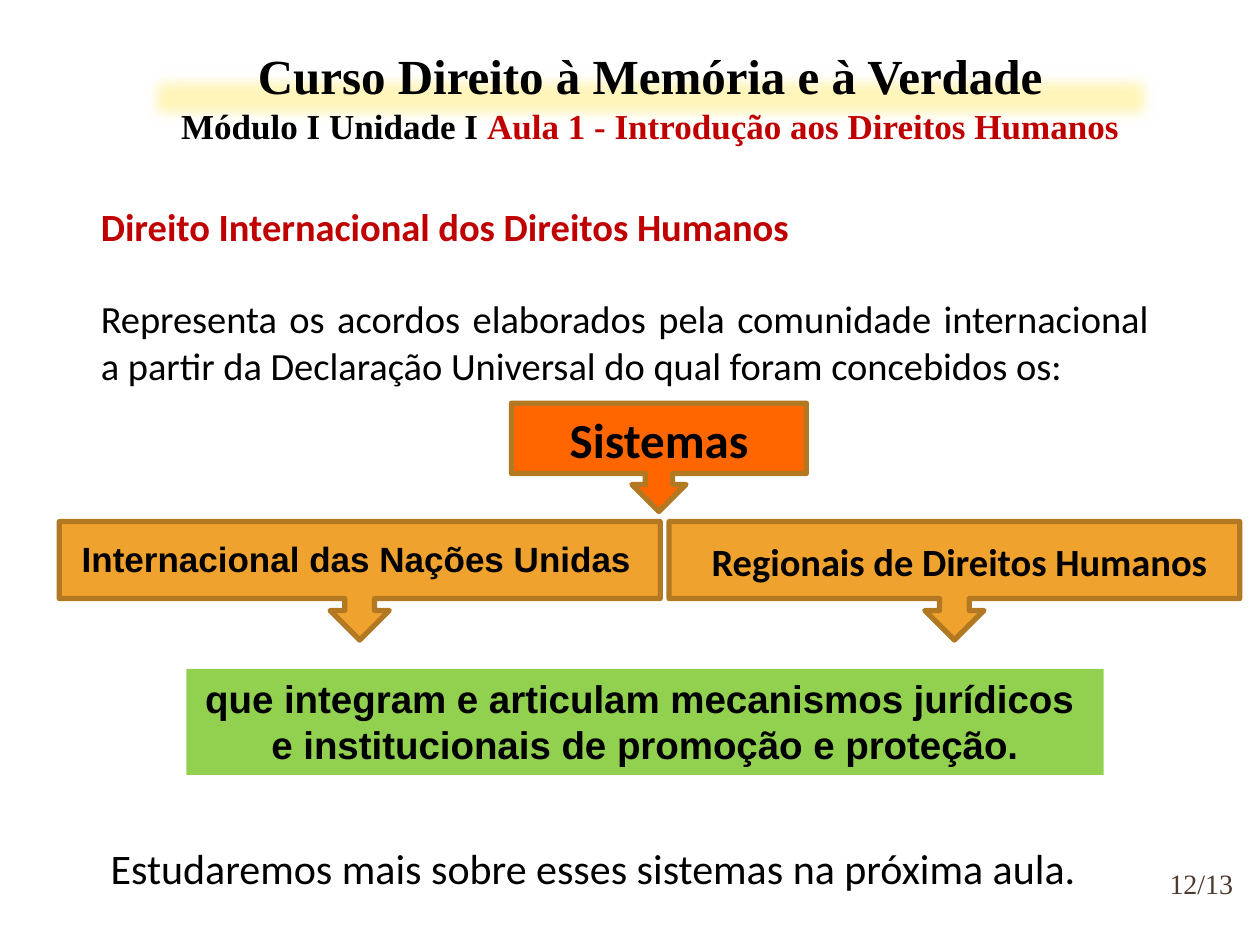
from lxml import etree
from pptx import Presentation
from pptx import util as u
from pptx.dml import color
from pptx.enum import shapes, text
from pptx.oxml import ns

Inches, Pt = u.Inches, u.Pt
COLORS = {
    "black": "000000", "red": "C00000", "brown": "4E3B30", "border": "B27822",
    "amber": "F0A22E", "orange": "FF6600", "green": "92D050", "glow": "FFF5BA",
}
LEFT, CENTER, JUSTIFY = text.PP_ALIGN.LEFT, text.PP_ALIGN.CENTER, text.PP_ALIGN.JUSTIFY


def rgb(name):
    return color.RGBColor.from_string(COLORS[name])


def inches(box):
    return [Inches(value) for value in box]


def place(shape, box):
    shape.left, shape.top, shape.width, shape.height = inches(box)


def style(para, size, font="Calibri", tint="black", bold=False, align=LEFT):
    para.alignment = align
    para.font.size = Pt(size)
    para.font.name = font
    para.font.bold = bold
    para.font.color.rgb = rgb(tint)


def add_shape(page, kind, box, fill, border=None):
    shape = page.shapes.add_shape(kind, *inches(box))
    shape.shadow.inherit = False
    shape.fill.solid()
    shape.fill.fore_color.rgb = rgb(fill)
    if border:
        shape.line.color.rgb = rgb(border)
        shape.line.width = Pt(3)
    else:
        shape.line.fill.background()
    return shape


def add_label(page, box, lines, size, fill=None, wrap=True, **looks):
    label = page.shapes.add_textbox(*inches(box))
    if fill:
        label.fill.solid()
        label.fill.fore_color.rgb = rgb(fill)
    frame = label.text_frame
    frame.word_wrap = wrap
    frame.text = "\n".join(lines)
    for para in frame.paragraphs:
        style(para, size, **looks)
    return frame


def add_header(page, box):
    left, top, width, height = box
    band = add_shape(page, shapes.MSO_SHAPE.RECTANGLE,
                     (left + 0.08, top + 0.2, width - 0.16, height - 0.38), "glow")
    effects = band._element.spPr.find(ns.qn("a:effectLst"))
    etree.SubElement(effects, ns.qn("a:softEdge"), rad=str(Inches(0.12)))
    title = page.shapes.title
    place(title, box)
    page.shapes._spTree.append(title._element)
    frame = title.text_frame
    frame.auto_size = text.MSO_AUTO_SIZE.NONE
    frame.vertical_anchor = text.MSO_ANCHOR.TOP
    frame.text = "Curso Direito à Memória e à Verdade\nMódulo I Unidade I "
    for para, size in zip(frame.paragraphs, (28, 20)):
        style(para, size, "Times New Roman", bold=True, align=CENTER)
    span = frame.paragraphs[1].add_run()
    span.text = "Aula 1 - Introdução aos Direitos Humanos"
    span.font.color.rgb = rgb("red")


def add_definition(page, box):
    body = page.placeholders[1]
    place(body, box)
    frame = body.text_frame
    frame.auto_size = text.MSO_AUTO_SIZE.NONE
    frame.text = (
        "Direito Internacional dos Direitos Humanos\n"
        "Representa os acordos elaborados pela comunidade internacional "
        "a partir da Declaração Universal do qual foram concebidos os:")
    for para in frame.paragraphs:
        properties = para._p.get_or_add_pPr()
        properties.set("marL", "0")
        properties.set("indent", "0")
        etree.SubElement(properties, ns.qn("a:buNone"))
    heading, definition = frame.paragraphs
    style(heading, 22, tint="red", bold=True)
    style(definition, 22, align=JUSTIFY)
    heading.space_before = Pt(0)
    definition.space_before = Pt(26.5)


def add_systems(page, box):
    left, top, width, height = box
    callout = shapes.MSO_SHAPE.DOWN_ARROW_CALLOUT
    branch_top, branch_height = top + 0.94, height - 0.94
    add_shape(page, callout, (left + 3.59, top, 2.34, 0.86), "orange", "border")
    add_label(page, (left + 3.9, top, 1.72, 0.57), ["Sistemas"], 28,
              bold=True, align=CENTER)
    for start, span_width in ((left, 4.77), (left + width - 4.53, 4.53)):
        add_shape(page, callout, (start, branch_top, span_width, branch_height),
                  "amber", "border")
    add_label(page, (left + 0.08, branch_top + 0.08, 4.6, 0.44),
              ["Internacional das Nações Unidas"], 20, fill="amber",
              font="Arial", bold=True)
    add_label(page, (left + 5.08, branch_top + 0.08, 4.18, 0.47),
              ["Regionais de Direitos Humanos"], 22, wrap=False, bold=True)


def add_result(page, box):
    add_label(page, box, ["que integram e articulam mecanismos jurídicos ",
                          "e institucionais de promoção e proteção."],
              22, fill="green", wrap=False, font="Arial", bold=True, align=CENTER)


def add_closing(page, box):
    add_label(page, box, ["Estudaremos mais sobre esses sistemas na próxima aula."],
              24, wrap=False)


def add_page_number(page, box):
    frame = add_label(page, box, ["12/13"], 16, font="Times New Roman",
                      tint="brown", align=CENTER)
    frame.margin_left = frame.margin_right = frame.margin_top = frame.margin_bottom = 0
    frame.vertical_anchor = text.MSO_ANCHOR.MIDDLE


def main():
    deck = Presentation()
    deck.slide_width, deck.slide_height = Inches(10), Inches(7.5)
    page = deck.slides.add_slide(deck.slide_layouts[1])
    add_header(page, (1.02, 0.31, 8.28, 0.91))
    add_definition(page, (0.7, 1.56, 8.52, 1.58))
    add_systems(page, (0.47, 3.2, 9.37, 1.88))
    add_result(page, (1.48, 5.31, 7.28, 0.84))
    add_closing(page, (0.78, 6.64, 7.93, 0.5))
    add_page_number(page, (9.2, 6.76, 0.67, 0.5))
    deck.save("out.pptx")


if __name__ == "__main__":
    main()
